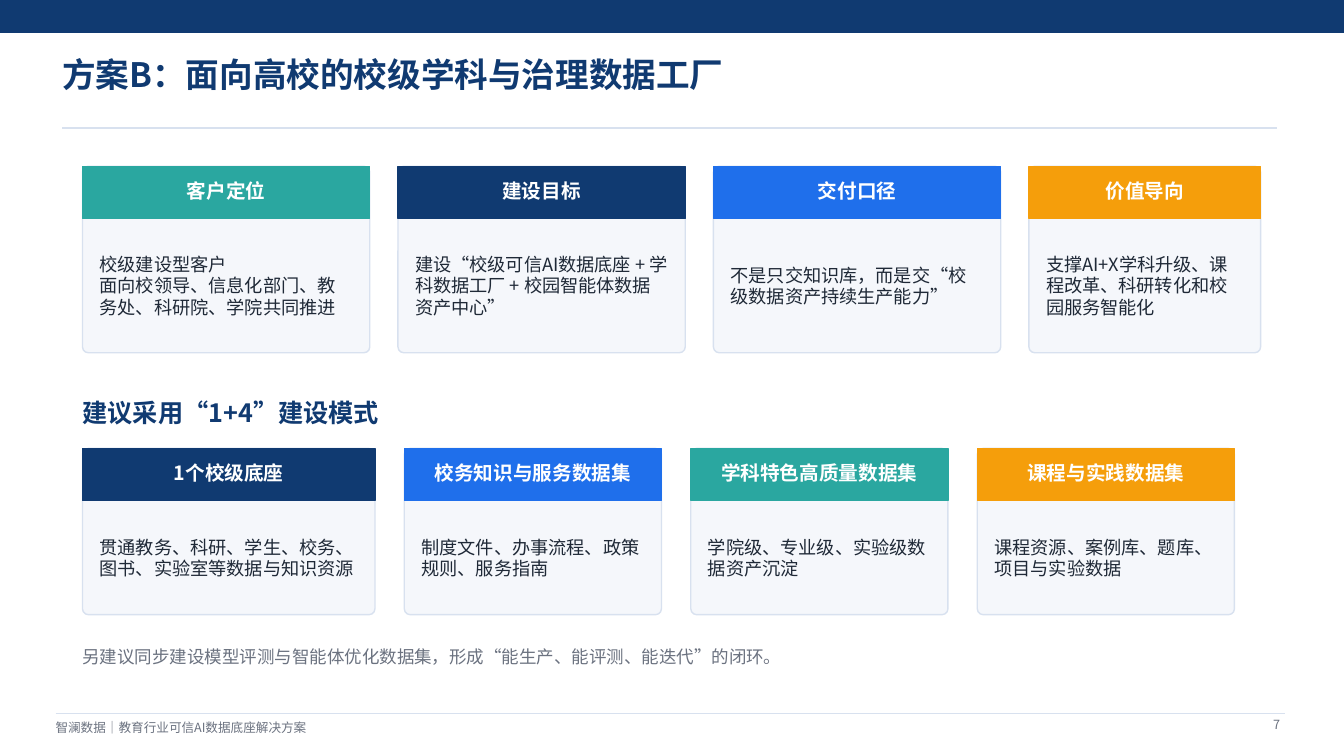
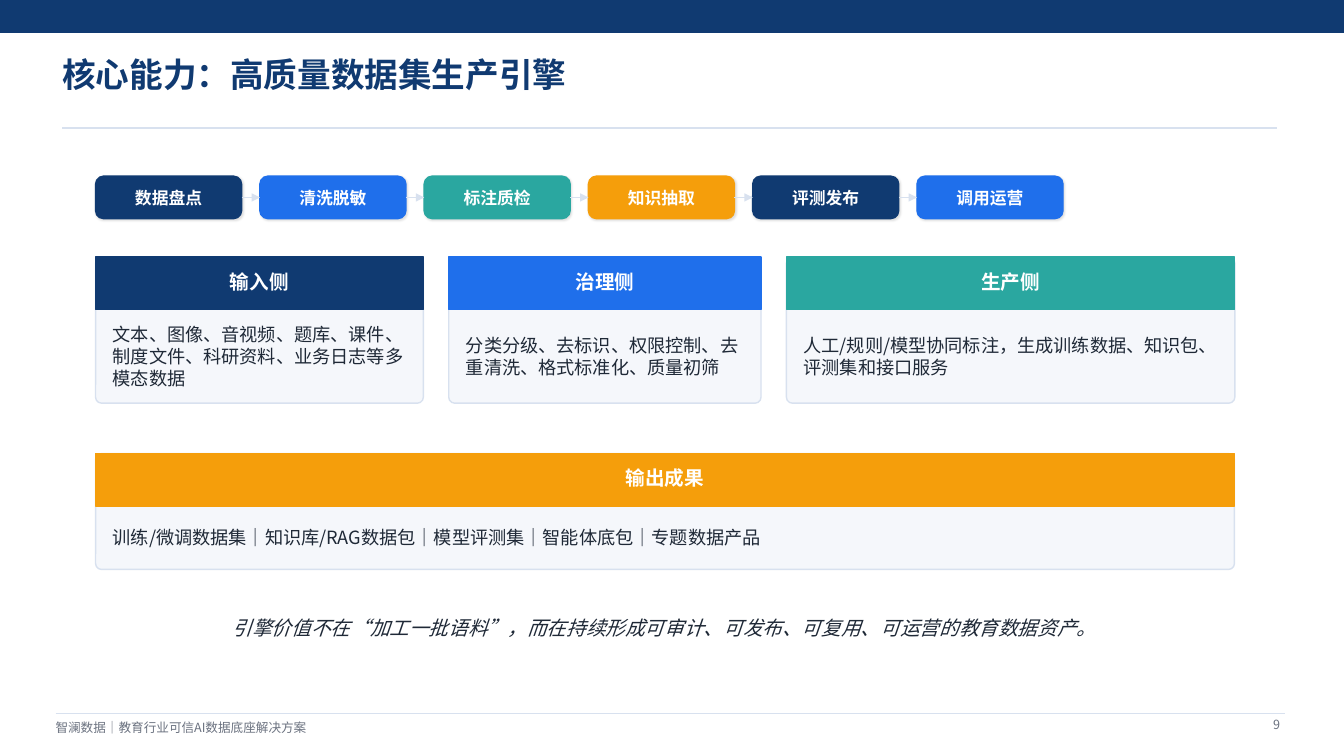
from collections import namedtuple
from dataclasses import dataclass

from lxml.etree import SubElement
from pptx import Presentation
from pptx.dml.color import RGBColor
from pptx.enum.shapes import MSO_CONNECTOR, MSO_SHAPE
from pptx.enum.text import MSO_ANCHOR, MSO_AUTO_SIZE, PP_ALIGN
from pptx.oxml.ns import qn
from pptx.util import Cm, Pt

Box = namedtuple("Box", "x y w h")
Style = namedtuple("Style", "size color bold italic align")


@dataclass(frozen=True)
class Theme:
    """Colours, font and type styles shared by all slides."""
    font: str = "Noto Sans CJK SC"
    navy: str = "103A71"
    blue: str = "1F6FEB"
    teal: str = "2AA7A0"
    amber: str = "F59E0B"
    rule: str = "D8E1EF"
    panel: str = "F5F7FB"
    title: Style = Style(24, "103A71", True, False, PP_ALIGN.LEFT)
    subtitle: Style = Style(18, "103A71", True, False, PP_ALIGN.LEFT)
    head: Style = Style(14, "FFFFFF", True, False, PP_ALIGN.CENTER)
    step: Style = Style(12, "FFFFFF", True, False, PP_ALIGN.CENTER)
    body: Style = Style(13, "1F2937", False, False, PP_ALIGN.LEFT)
    quote: Style = Style(14, "1F2937", False, True, PP_ALIGN.CENTER)
    note: Style = Style(12.5, "6B7280", False, False, PP_ALIGN.LEFT)
    footer: Style = Style(9, "6B7280", False, False, PP_ALIGN.LEFT)
    page: Style = Style(9, "6B7280", False, False, PP_ALIGN.RIGHT)


T = Theme()
FOOTER = "智澜数据｜教育行业可信AI数据底座解决方案"


def rgb(code):
    """Return the colour for a hex code."""
    return RGBColor.from_string(code)


def write(tf, text, style, margins=(0, 0, 0, 0)):
    """Fill a text frame, one paragraph a line; margins are left, top, right, bottom."""
    left, top, right, bottom = (Cm(m) for m in margins)
    frame = {"word_wrap": True, "auto_size": MSO_AUTO_SIZE.NONE,
             "vertical_anchor": MSO_ANCHOR.MIDDLE, "margin_left": left,
             "margin_top": top, "margin_right": right, "margin_bottom": bottom}
    for key, value in frame.items():
        setattr(tf, key, value)
    font = {"name": T.font, "size": Pt(style.size),
            "bold": style.bold, "italic": style.italic}
    for i, line in enumerate(text.split("\n")):
        p = tf.add_paragraph() if i else tf.paragraphs[0]
        p.alignment = style.align
        r = p.add_run()
        r.text = line
        for key, value in font.items():
            setattr(r.font, key, value)
        r.font.color.rgb = rgb(style.color)
        SubElement(r._r.get_or_add_rPr(), qn("a:ea"), typeface=T.font)


def add_text(s, box, text, style):
    """Add a text box."""
    write(s.shapes.add_textbox(*map(Cm, box)).text_frame, text, style)


def add_block(s, box, fill, line=None, radius=0):
    """Add a filled rectangle, rounded when a radius is given."""
    kind = MSO_SHAPE.ROUNDED_RECTANGLE if radius else MSO_SHAPE.RECTANGLE
    sp = s.shapes.add_shape(kind, *map(Cm, box))
    if radius:
        sp.adjustments[0] = radius / min(box.w, box.h)
    sp.shadow.inherit = False
    sp.fill.solid()
    sp.fill.fore_color.rgb = rgb(fill)
    sp.line.color.rgb = rgb(line or fill)
    sp.line.width = Pt(1)
    return sp


def add_line(s, x1, y1, x2, y2):
    """Add a thin straight rule."""
    cx = s.shapes.add_connector(MSO_CONNECTOR.STRAIGHT, Cm(x1), Cm(y1), Cm(x2), Cm(y2))
    cx.line.color.rgb = rgb(T.rule)
    cx.line.width = Pt(1)
    SubElement(cx._element.spPr, qn("a:effectLst"))
    return cx


def add_shadow(sp):
    """Give a shape a faint shadow to its lower right."""
    effects = sp._element.spPr.find(qn("a:effectLst"))
    shadow = SubElement(effects, qn("a:outerShdw"), blurRad=str(Pt(1.5)),
                        dist=str(Pt(1)), dir="2700000", algn="tl", rotWithShape="0")
    color = SubElement(shadow, qn("a:srgbClr"), val="000000")
    SubElement(color, qn("a:alpha"), val="12000")


def add_frame(prs, title, page):
    """Add a slide with the band, title, rules and footer."""
    s = prs.slides.add_slide(prs.slide_layouts[5])
    add_block(s, Box(0, 0, 33.87, 0.81), T.navy)
    add_line(s, 1.4, 17.98, 32.39, 17.98)
    add_text(s, Box(1.4, 18.11, 12.19, 0.46), FOOTER, T.footer)
    add_text(s, Box(30.99, 18.03, 1.27, 0.46), str(page), T.page)
    sp = s.shapes.title
    sp.left, sp.top, sp.width, sp.height = map(Cm, (1.57, 1.32, 22.61, 1.07))
    write(sp.text_frame, title, T.title)
    add_line(s, 1.57, 3.23, 32.18, 3.23)
    return s


def add_card(s, box, color, head, body):
    """Add a panel with a coloured header across its top."""
    panel = add_block(s, box, T.panel, T.rule, 0.15)
    write(panel.text_frame, body, T.body, (0.39, 1.61, 0.39, 0.29))
    header = add_block(s, box._replace(h=1.32), color)
    write(header.text_frame, head, T.head, (0.38, 0, 0.38, 0.1))


def add_cards(s, x, y, h, gap, cards):
    """Add a row of cards given as width, colour, heading and text."""
    for w, *content in cards:
        add_card(s, Box(x, y, w, h), *content)
        x += w + gap


def add_flow(s, box, gap, steps):
    """Add equal steps from the box rightwards, joined by arrows."""
    colors = (T.navy, T.blue, T.teal, T.amber)
    nodes = []
    for i, label in enumerate(steps):
        cell = box._replace(x=box.x + i * (box.w + gap))
        sp = add_block(s, cell, colors[i % len(colors)], radius=0.2)
        add_shadow(sp)
        write(sp.text_frame, label, T.step)
        nodes.append(sp)
    for a, b in zip(nodes, nodes[1:]):
        cx = add_line(s, 0, 0, 1, 1)
        cx.begin_connect(a, 3)
        cx.end_connect(b, 1)
        SubElement(cx.line._get_or_add_ln(), qn("a:tailEnd"), type="triangle")


def add_plan(prs):
    """Build the university plan slide."""
    s = add_frame(prs, "方案B：面向高校的校级学科与治理数据工厂", 7)
    add_cards(s, 2.08, 4.19, 4.7, 0.71, [
        (7.24, T.teal, "客户定位",
         "校级建设型客户\n面向校领导、信息化部门、教务处、科研院、学院共同推进"),
        (7.24, T.navy, "建设目标",
         "建设“校级可信AI数据底座 + 学科数据工厂 + 校园智能体数据资产中心”"),
        (7.24, T.blue, "交付口径", "不是只交知识库，而是交“校级数据资产持续生产能力”"),
        (5.84, T.amber, "价值导向", "支撑AI+X学科升级、课程改革、科研转化和校园服务智能化"),
    ])
    add_text(s, Box(2.08, 10.03, 10.16, 0.71), "建议采用“1+4”建设模式", T.subtitle)
    add_cards(s, 2.08, 11.3, 4.19, 0.74, [
        (7.37, T.navy, "1个校级底座",
         "贯通教务、科研、学生、校务、图书、实验室等数据与知识资源"),
        (6.48, T.blue, "校务知识与服务数据集", "制度文件、办事流程、政策规则、服务指南"),
        (6.48, T.teal, "学科特色高质量数据集", "学院级、专业级、实验级数据资产沉淀"),
        (6.48, T.amber, "课程与实践数据集", "课程资源、案例库、题库、项目与实验数据"),
    ])
    add_text(s, Box(2.08, 16.26, 28.96, 0.56),
             "另建议同步建设模型评测与智能体优化数据集，形成“能生产、能评测、能迭代”的闭环。",
             T.note)


def add_engine(prs):
    """Build the production engine slide."""
    s = add_frame(prs, "核心能力：高质量数据集生产引擎", 9)
    add_flow(s, Box(2.41, 4.44, 3.68, 1.07), 0.46,
             ["数据盘点", "清洗脱敏", "标注质检", "知识抽取", "评测发布", "调用运营"])
    add_cards(s, 2.41, 6.48, 3.68, 0.64, [
        (8.26, T.navy, "输入侧",
         "文本、图像、音视频、题库、课件、制度文件、科研资料、业务日志等多模态数据"),
        (7.87, T.blue, "治理侧", "分类分级、去标识、权限控制、去重清洗、格式标准化、质量初筛"),
        (11.3, T.teal, "生产侧",
         "人工/规则/模型协同标注，生成训练数据、知识包、评测集和接口服务"),
    ])
    add_card(s, Box(2.41, 11.43, 28.7, 2.92), T.amber, "输出成果",
             "训练/微调数据集｜知识库/RAG数据包｜模型评测集｜智能体底包｜专题数据产品")
    add_text(s, Box(2.41, 15.37, 28.7, 0.91),
             "引擎价值不在“加工一批语料”，而在持续形成可审计、可发布、可复用、可运营的教育数据资产。",
             T.quote)


def main():
    """Build and save the deck."""
    prs = Presentation()
    prs.slide_width, prs.slide_height = Cm(33.87), Cm(19.05)
    add_plan(prs)
    add_engine(prs)
    prs.save("out.pptx")


if __name__ == "__main__":
    main()
